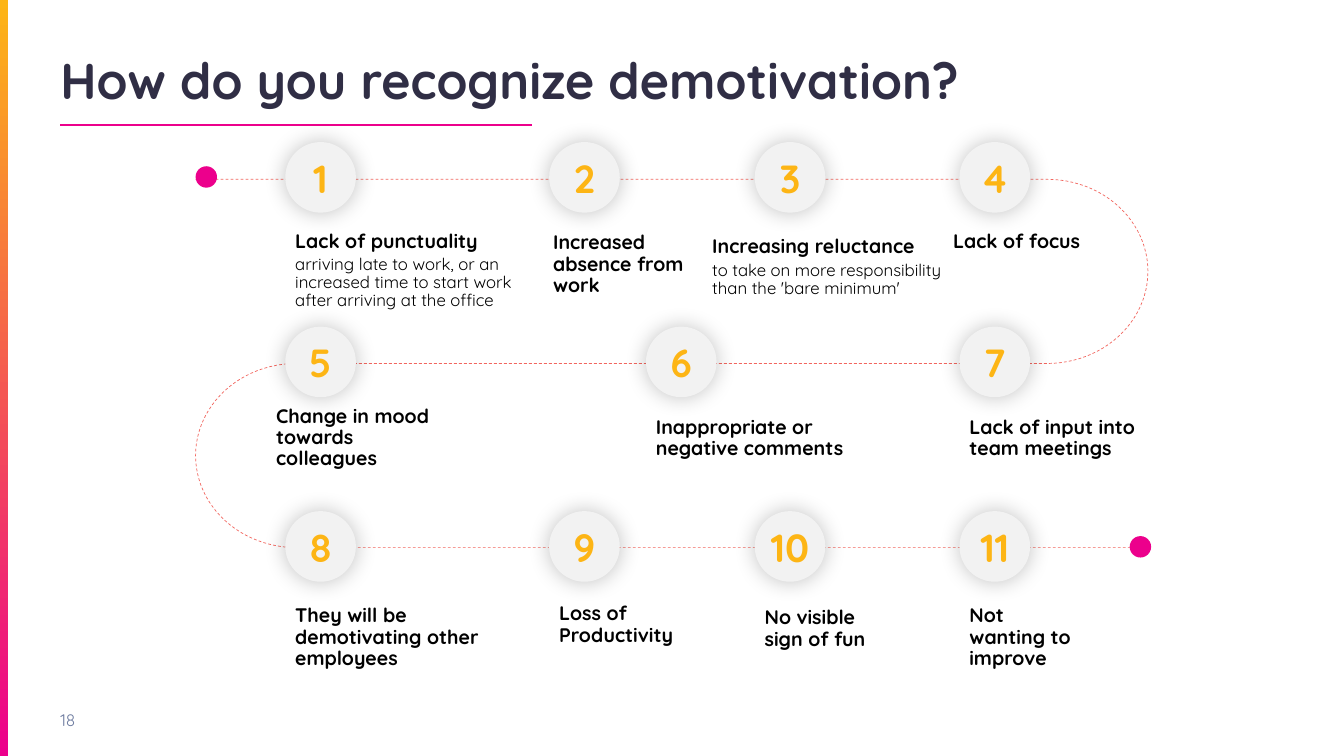
from dataclasses import dataclass
from math import cos, pi, sin

from lxml import etree
from pptx import Presentation
from pptx.dml.color import RGBColor
from pptx.enum.dml import MSO_LINE
from pptx.enum.shapes import MSO_CONNECTOR, MSO_SHAPE
from pptx.enum.text import MSO_ANCHOR, MSO_AUTO_SIZE, PP_ALIGN
from pptx.oxml.ns import qn
from pptx.shapes.autoshape import Shape
from pptx.slide import Slide
from pptx.text.text import TextFrame
from pptx.util import Cm, Pt

OVAL, RECTANGLE = MSO_SHAPE.OVAL, MSO_SHAPE.RECTANGLE
STRAIGHT, DASH = MSO_CONNECTOR.STRAIGHT, MSO_LINE.DASH
MIDDLE, TOP = MSO_ANCHOR.MIDDLE, MSO_ANCHOR.TOP
LEFT, CENTER = PP_ALIGN.LEFT, PP_ALIGN.CENTER
FIT_SHAPE = MSO_AUTO_SIZE.SHAPE_TO_FIT_TEXT

FONT = "Quicksand"
NAVY = RGBColor(0x30, 0x2E, 0x45)
SLATE = RGBColor(0x6E, 0x7C, 0xA0)
BLACK = RGBColor(0x00, 0x00, 0x00)
AMBER = RGBColor(0xFD, 0xB5, 0x15)
MAGENTA = RGBColor(0xEC, 0x00, 0x8C)
CORAL = RGBColor(0xF2, 0x66, 0x5F)
PALE_GRAY = RGBColor(0xF2, 0xF2, 0xF2)

SLIDE_WIDTH, SLIDE_HEIGHT = 33.87, 19.05
COLUMNS = (7.19, 13.84, 19.02, 24.18)
MIDDLE_COLUMN = 16.28
FIRST_ROW, ROW_PITCH = 3.58, 4.65
BADGE_SIZE, DOT_SIZE = 1.78, 0.54
TRACK_LEFT, TRACK_RIGHT, TRACK_TOP = 4.93, 28.93, 4.52
TURN_WIDTH, TURN_HEIGHT = 2.54, 2.32
TURN_SEGMENTS = 48


@dataclass(frozen=True)
class Step:
    number: int
    badge_left: float
    row: int
    label_left: float
    label_top: float
    label_width: float
    heading: str
    detail: str = ""
    gap: float = 3


STEPS = (
    Step(1, COLUMNS[0], 0, 7.19, 5.71, 6.4, "Lack of punctuality",
         "arriving late to work, or an increased time to start work after arriving at the office", 2),
    Step(2, COLUMNS[1], 0, 13.69, 5.74, 4.5, "Increased absence from work"),
    Step(3, COLUMNS[2], 0, 17.7, 5.82, 7.06, "Increasing reluctance",
         "to take on more responsibility than the 'bare minimum'"),
    Step(4, COLUMNS[3], 0, 23.77, 5.71, 4.5, "Lack of focus"),
    Step(5, COLUMNS[0], 1, 6.71, 10.11, 4.5, "Change in mood towards colleagues"),
    Step(6, MIDDLE_COLUMN, 1, 16.28, 10.39, 5.87, "Inappropriate or negative comments"),
    Step(7, COLUMNS[3], 1, 24.18, 10.39, 5.54, "Lack of input into team meetings"),
    Step(8, COLUMNS[0], 2, 7.19, 15.14, 5.18, "They will be demotivating other employees"),
    Step(9, COLUMNS[1], 2, 13.84, 15.09, 4.5, "Loss of Productivity"),
    Step(10, COLUMNS[2], 2, 19.02, 15.19, 3.43, "No visible sign of fun"),
    Step(11, COLUMNS[3], 2, 24.18, 15.14, 3.25, "Not wanting to improve"),
)


def write_text(frame: TextFrame, text: str, *, size: float, color: RGBColor,
               bold: bool = False, alignment: PP_ALIGN = LEFT,
               line_spacing: float = 1.0, space_after: float = 0) -> None:
    paragraph = frame.paragraphs[0]
    if paragraph.runs:
        paragraph = frame.add_paragraph()
    paragraph.alignment = alignment
    paragraph.line_spacing = line_spacing
    paragraph.space_after = Pt(space_after)
    run = paragraph.add_run()
    run.text = text
    run.font.name = FONT
    run.font.size = Pt(size)
    run.font.bold = bold
    run.font.color.rgb = color


def set_margins(frame: TextFrame, horizontal: float, vertical: float) -> None:
    frame.margin_left = frame.margin_right = Cm(horizontal)
    frame.margin_top = frame.margin_bottom = Cm(vertical)


def add_text_frame(slide: Slide, left: float, top: float, width: float, height: float,
                   horizontal_margin: float = 0.25, vertical_margin: float = 0.13,
                   anchor: MSO_ANCHOR = TOP) -> TextFrame:
    frame = slide.shapes.add_textbox(Cm(left), Cm(top), Cm(width), Cm(height)).text_frame
    frame.word_wrap = True
    frame.vertical_anchor = anchor
    set_margins(frame, horizontal_margin, vertical_margin)
    return frame


def add_circle(slide: Slide, left: float, top: float, size: float, color: RGBColor) -> Shape:
    circle = slide.shapes.add_shape(OVAL, Cm(left), Cm(top), Cm(size), Cm(size))
    circle.shadow.inherit = False
    circle.fill.solid()
    circle.fill.fore_color.rgb = color
    circle.line.fill.background()
    return circle


def add_glow_shadow(shape: Shape) -> None:
    effects = shape.element.spPr.find(qn("a:effectLst"))
    shadow = etree.SubElement(effects, qn("a:outerShdw"), blurRad=str(Pt(16)),
                              dist="0", dir="0", algn="ctr", rotWithShape="0")
    color = etree.SubElement(shadow, qn("a:srgbClr"), val=str(BLACK))
    etree.SubElement(color, qn("a:alpha"), val="23000")


def add_side_bar(slide: Slide) -> None:
    bar = slide.shapes.add_shape(RECTANGLE, 0, 0, Cm(0.2), Cm(SLIDE_HEIGHT))
    bar.shadow.inherit = False
    bar.line.fill.background()
    bar.fill.gradient()
    bar.fill.gradient_angle = 270
    for stop, color in zip(bar.fill.gradient_stops, (AMBER, MAGENTA)):
        stop.color.rgb = color


def turn_points(center_x: float, top: float, direction: int) -> list[tuple[int, int]]:
    angles = [pi * index / TURN_SEGMENTS for index in range(TURN_SEGMENTS + 1)]
    return [(Cm(center_x + direction * TURN_WIDTH * sin(angle)),
             Cm(top + TURN_HEIGHT * (1 - cos(angle)))) for angle in angles]


def add_track(slide: Slide) -> None:
    middle = TRACK_TOP + 2 * TURN_HEIGHT
    bottom = middle + 2 * TURN_HEIGHT
    points = turn_points(TRACK_RIGHT - TURN_WIDTH, TRACK_TOP, 1)
    points += turn_points(TRACK_LEFT + TURN_WIDTH, middle, -1)
    points.append((Cm(TRACK_RIGHT), Cm(bottom)))
    builder = slide.shapes.build_freeform(Cm(TRACK_LEFT), Cm(TRACK_TOP))
    builder.add_line_segments(points, close=False)
    track = builder.convert_to_shape()
    track.shadow.inherit = False
    track.fill.background()
    track.line.color.rgb = CORAL
    track.line.width = Pt(0.5)
    track.line.dash_style = DASH


def add_title(slide: Slide) -> None:
    frame = add_text_frame(slide, 1.52, 1.24, 30.8, 1.55, 0, 0)
    write_text(frame, "How do you recognize demotivation?", size=36, color=NAVY, bold=True)
    rule = slide.shapes.add_connector(STRAIGHT, Cm(1.52), Cm(3.15), Cm(13.41), Cm(3.15))
    rule.line.color.rgb = MAGENTA
    rule.line.width = Pt(1.5)
    etree.SubElement(rule.element.spPr, qn("a:effectLst"))


def add_step(slide: Slide, step: Step) -> None:
    badge = add_circle(slide, step.badge_left, FIRST_ROW + step.row * ROW_PITCH,
                       BADGE_SIZE, PALE_GRAY)
    add_glow_shadow(badge)
    set_margins(badge.text_frame, 0, 0)
    badge.text_frame.vertical_anchor = MIDDLE
    write_text(badge.text_frame, str(step.number), size=28, color=AMBER,
               bold=True, alignment=CENTER)
    label = add_text_frame(slide, step.label_left, step.label_top, step.label_width, 1.35)
    label.auto_size = FIT_SHAPE
    write_text(label, step.heading, size=14, color=BLACK, bold=True,
               line_spacing=0.9, space_after=step.gap)
    if step.detail:
        write_text(label, step.detail, size=12, color=BLACK,
                   line_spacing=0.9, space_after=step.gap)


def main() -> None:
    presentation = Presentation()
    presentation.slide_width = Cm(SLIDE_WIDTH)
    presentation.slide_height = Cm(SLIDE_HEIGHT)
    slide = presentation.slides.add_slide(presentation.slide_layouts[6])
    add_side_bar(slide)
    add_track(slide)
    add_title(slide)
    for left, top in ((TRACK_LEFT, 4.19), (28.47, 13.51)):
        add_circle(slide, left, top, DOT_SIZE, MAGENTA)
    for step in STEPS:
        add_step(slide, step)
    page_number = add_text_frame(slide, 1.52, 17.63, 1.75, 1.02, 0, anchor=MIDDLE)
    write_text(page_number, "18", size=12, color=SLATE)
    presentation.save("out.pptx")


if __name__ == "__main__":
    main()
